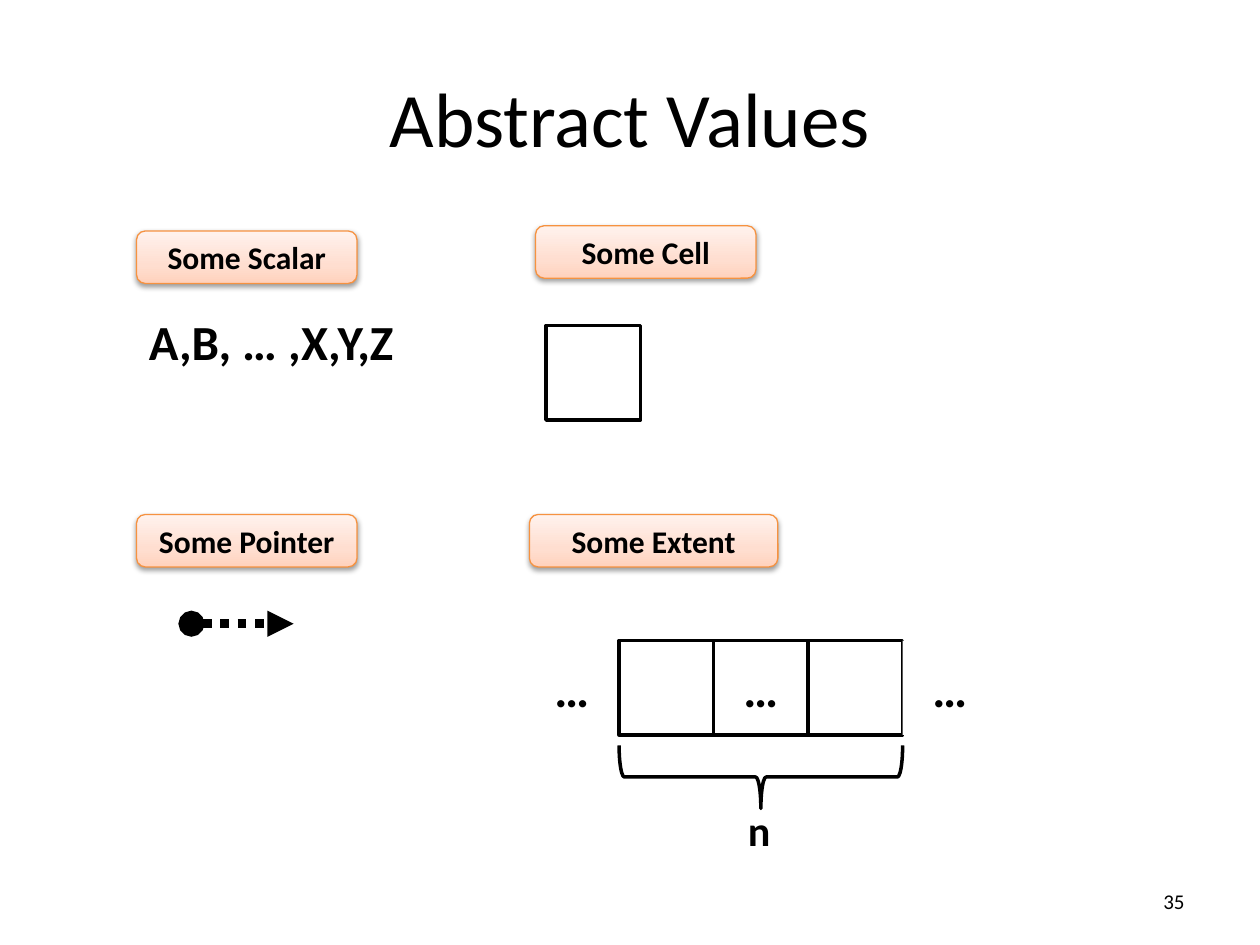
from pptx import Presentation
from pptx.dml.color import RGBColor
from pptx.enum.dml import MSO_LINE
from pptx.enum.shapes import MSO_CONNECTOR, MSO_SHAPE
from pptx.enum.text import MSO_ANCHOR, PP_ALIGN
from pptx.oxml.ns import qn
from pptx.util import Pt
from lxml import etree

BLACK, WHITE, ORANGE = "000000", "FFFFFF", "F69240"
LABEL_STOPS = [(0, "FFD2BD"), (35, "FFDED0"), (100, "FFF2ED")]
CELL = 54
LABEL_HEIGHT = 30


def color(value):
    return RGBColor.from_string(value)


def add_child(parent, tag, **attributes):
    child = etree.SubElement(parent, qn(tag))
    for name, value in attributes.items():
        child.set(name, str(value))
    return child


def write(shape, text, size, align=PP_ALIGN.CENTER, bold=True, wrap=True):
    frame = shape.text_frame
    frame.word_wrap = wrap
    frame.vertical_anchor = MSO_ANCHOR.MIDDLE
    paragraph = frame.paragraphs[0]
    paragraph.alignment = align
    run = paragraph.add_run()
    run.text = text
    run.font.name = "Calibri"
    run.font.size = Pt(size)
    run.font.bold = bold
    run.font.color.rgb = color(BLACK)


def add_text(shapes, box, text, size, **options):
    shape = shapes.add_textbox(*map(Pt, box))
    write(shape, text, size, **options)


def add_box(shapes, kind, box, fill=None, line=None, line_width=2):
    shape = shapes.add_shape(kind, *map(Pt, box))
    shape.shadow.inherit = False
    if fill:
        shape.fill.solid()
        shape.fill.fore_color.rgb = color(fill)
    else:
        shape.fill.background()
    if line:
        shape.line.color.rgb = color(line)
        shape.line.width = Pt(line_width)
    else:
        shape.line.fill.background()
    return shape


def add_cell(shapes, left, top, text="", line=BLACK):
    shape = add_box(shapes, MSO_SHAPE.RECTANGLE, (left, top, CELL, CELL), WHITE, line)
    if text:
        write(shape, text, 28)


def add_label(shapes, left, top, width, text):
    shape = add_box(shapes, MSO_SHAPE.ROUNDED_RECTANGLE,
                    (left, top, width, LABEL_HEIGHT), line=ORANGE, line_width=0.75)
    # Three-stop gradient, darkest at the bottom
    shape.fill.gradient()
    shape.fill.gradient_angle = 90
    properties = shape._element.spPr
    stops = properties.find(qn("a:gradFill")).find(qn("a:gsLst"))
    for stop in list(stops):
        stops.remove(stop)
    for position, value in LABEL_STOPS:
        stop = add_child(stops, "a:gs", pos=position * 1000)
        add_child(stop, "a:srgbClr", val=value)
    # Soft shadow below
    shadow = add_child(properties.find(qn("a:effectLst")), "a:outerShdw",
                       blurRad=Pt(3.1), dist=Pt(1.6), dir=90 * 60000, rotWithShape=0)
    add_child(add_child(shadow, "a:srgbClr", val=BLACK), "a:alpha", val=38000)
    write(shape, text, 18)


def add_scalar(slide, left, top):
    shape = add_box(slide.shapes, MSO_SHAPE.RECTANGLE, (left, top + 36, 234, CELL), line=WHITE)
    write(shape, "A,B, … ,X,Y,Z", 28, align=PP_ALIGN.LEFT)
    add_label(slide.shapes, left, top, 126, "Some Scalar")


def add_cell_example(slide, left, top):
    add_label(slide.shapes, left, top, 126, "Some Cell")
    add_cell(slide.shapes, left + 6, top + 57)


def add_pointer(slide, left, top):
    add_label(slide.shapes, left, top, 126, "Some Pointer")
    # Dotted arrow with a round tail
    y = Pt(top + 62.4)
    arrow = slide.shapes.add_connector(
        MSO_CONNECTOR.STRAIGHT, Pt(left + 31.4), y, Pt(left + 89.8), y)
    arrow.line.color.rgb = color(BLACK)
    arrow.line.width = Pt(5)
    arrow.line.dash_style = MSO_LINE.ROUND_DOT
    line = arrow.line._get_or_add_ln()
    add_child(line, "a:headEnd", type="oval")
    add_child(line, "a:tailEnd", type="triangle")
    add_child(arrow._element.spPr, "a:effectLst")


def add_extent(slide, left, top):
    add_label(slide.shapes, left, top, 142, "Some Extent")
    group = slide.shapes.add_group_shape()
    # Row of cells, open at both ends
    row_left, row_top = left - 2.7, top + 72
    cells = [("…", None), ("", BLACK), ("…", BLACK), ("", BLACK), ("…", None)]
    for index, (text, line) in enumerate(cells):
        add_cell(group.shapes, row_left + index * CELL, row_top, text, line)
    # Upright brace turned to lie under the three outlined cells
    center = row_left + 2.5 * CELL
    depth, span = 36, 3 * CELL
    middle = row_top + CELL + 24
    brace = add_box(group.shapes, MSO_SHAPE.LEFT_BRACE,
                    (center - depth / 2, middle - span / 2, depth, span), line=BLACK)
    brace.rotation = 270
    add_text(group.shapes, (center - 14.5, row_top + 90, 27, 36), "n", 24,
             align=PP_ALIGN.LEFT, wrap=False)


def main():
    presentation = Presentation()
    presentation.slide_width, presentation.slide_height = Pt(720), Pt(540)
    slide = presentation.slides.add_slide(presentation.slide_layouts[6])

    # Title
    add_text(slide.shapes, (36, 21.6, 648, 90), "Abstract Values", 44, bold=False)

    # Four kinds of value
    add_scalar(slide, 78, 132)
    add_cell_example(slide, 306, 129)
    add_pointer(slide, 78, 294)
    add_extent(slide, 302.5, 294)

    # Page number
    add_text(slide.shapes, (516, 500.5, 168, 28.8), "35", 12,
             align=PP_ALIGN.RIGHT, bold=False)
    presentation.save("out.pptx")


if __name__ == "__main__":
    main()
